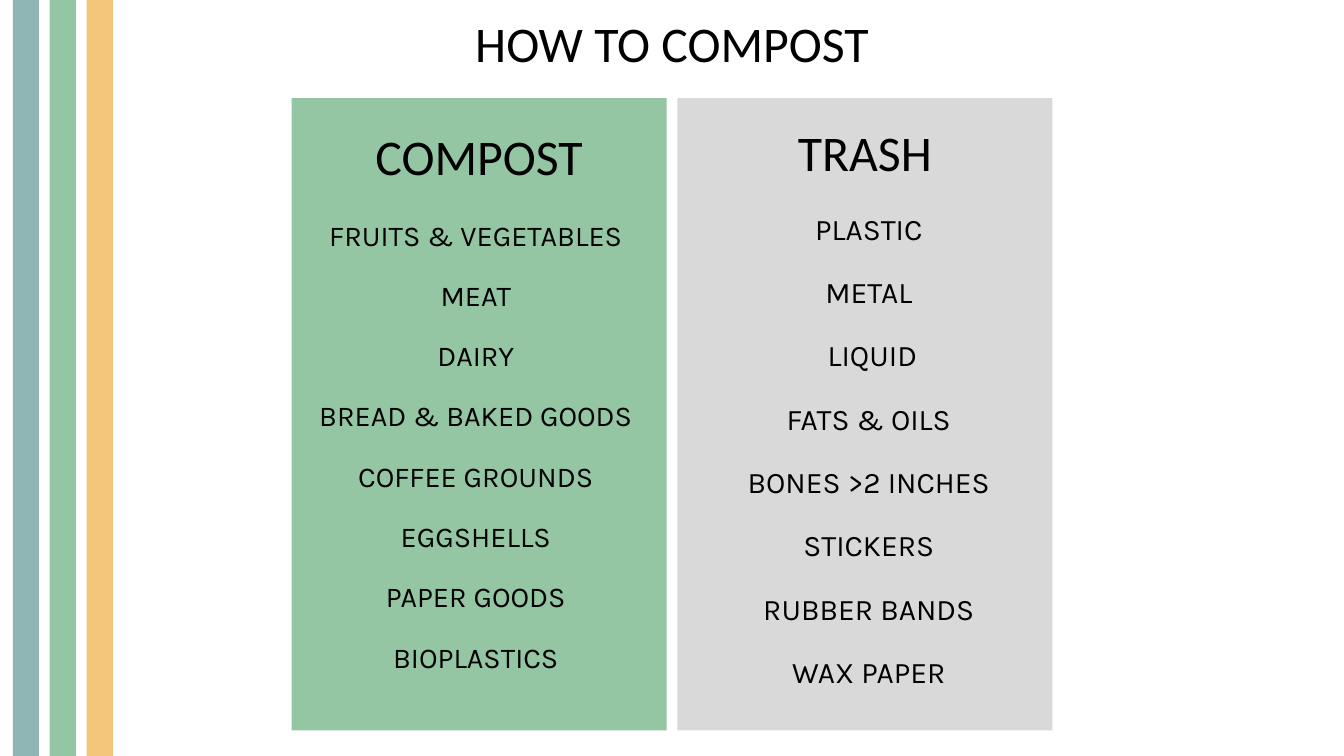
import pptx
import pptx.util
import pptx.dml.color
import pptx.enum.shapes
import pptx.enum.text

Inches = pptx.util.Inches
Pt = pptx.util.Pt

SLIDE_WIDTH, SLIDE_HEIGHT = 20, 11.25
TITLE = "HOW TO COMPOST"
STRIPES = ["8FB6B5", "94C6A4", "F4C67C"]
COLUMNS = [
    {
        "heading": "COMPOST", "fill": "94C6A4", "heading_top": 1.72,
        "items_box": (4.47, 3.15, 5.22, 8.47),
        "size": 30.8, "line": 43.1, "gap": 21.5,
        "items": ["FRUITS & VEGETABLES", "MEAT", "DAIRY", "BREAD & BAKED GOODS",
                  "COFFEE GROUNDS", "EGGSHELLS", "PAPER GOODS", "BIOPLASTICS"],
    },
    {
        "heading": "TRASH", "fill": "D9D9D9", "heading_top": 1.66,
        "items_box": (10.55, 3.04, 4.76, 8.38),
        "size": 32, "line": 44.7, "gap": 23.2,
        "items": ["PLASTIC", "METAL", " LIQUID", "FATS & OILS",
                  "BONES >2 INCHES", "STICKERS", "RUBBER BANDS", "WAX PAPER"],
    },
]
STRIPE_LEFT, STRIPE_WIDTH, STRIPE_PITCH = 0.19, 0.39, 0.55
COLUMN_LEFT, COLUMN_TOP, COLUMN_WIDTH, COLUMN_HEIGHT = 4.34, 1.46, 5.58, 9.41
COLUMN_PITCH = 5.74
HEADING_WIDTH, HEADING_HEIGHT = 11.59, 1.16


def color(hex_code):
    return pptx.dml.color.RGBColor.from_string(hex_code)


def add_block(slide, box, fill):
    block = slide.shapes.add_shape(
        pptx.enum.shapes.MSO_SHAPE.RECTANGLE, *map(Inches, box))
    block.shadow.inherit = False
    block.fill.solid()
    block.fill.fore_color.rgb = color(fill)
    block.line.fill.background()


def add_lines(slide, box, lines, font, size, line_height, gap=0):
    frame = slide.shapes.add_textbox(*map(Inches, box)).text_frame
    frame.word_wrap = True
    frame.margin_left = frame.margin_right = 0
    frame.margin_top = frame.margin_bottom = 0
    for index, line in enumerate(lines):
        paragraph = frame.add_paragraph() if index else frame.paragraphs[0]
        paragraph.alignment = pptx.enum.text.PP_ALIGN.CENTER
        paragraph.line_spacing = Pt(line_height)
        paragraph.space_after = Pt(gap)
        run = paragraph.add_run()
        run.text = line
        run.font.name = font
        run.font.size = Pt(size)
        run.font.color.rgb = color("000000")


def add_heading(slide, heading, center, top):
    box = (center - HEADING_WIDTH / 2, top, HEADING_WIDTH, HEADING_HEIGHT)
    add_lines(slide, box, [heading], "Calibri", 53.4, 74.8)


def main():
    deck = pptx.Presentation()
    deck.slide_width = Inches(SLIDE_WIDTH)
    deck.slide_height = Inches(SLIDE_HEIGHT)
    slide = deck.slides.add_slide(deck.slide_layouts[6])

    add_heading(slide, TITLE, SLIDE_WIDTH / 2, 0.04)

    for index, column in enumerate(COLUMNS):
        left = COLUMN_LEFT + index * COLUMN_PITCH
        add_block(slide, (left, COLUMN_TOP, COLUMN_WIDTH, COLUMN_HEIGHT), column["fill"])
        add_heading(slide, column["heading"], left + COLUMN_WIDTH / 2, column["heading_top"])
        add_lines(slide, column["items_box"], column["items"], "Karla",
                  column["size"], column["line"], column["gap"])

    for index, fill in enumerate(STRIPES):
        left = STRIPE_LEFT + index * STRIPE_PITCH
        add_block(slide, (left, 0, STRIPE_WIDTH, SLIDE_HEIGHT), fill)

    deck.save("out.pptx")


if __name__ == "__main__":
    main()
